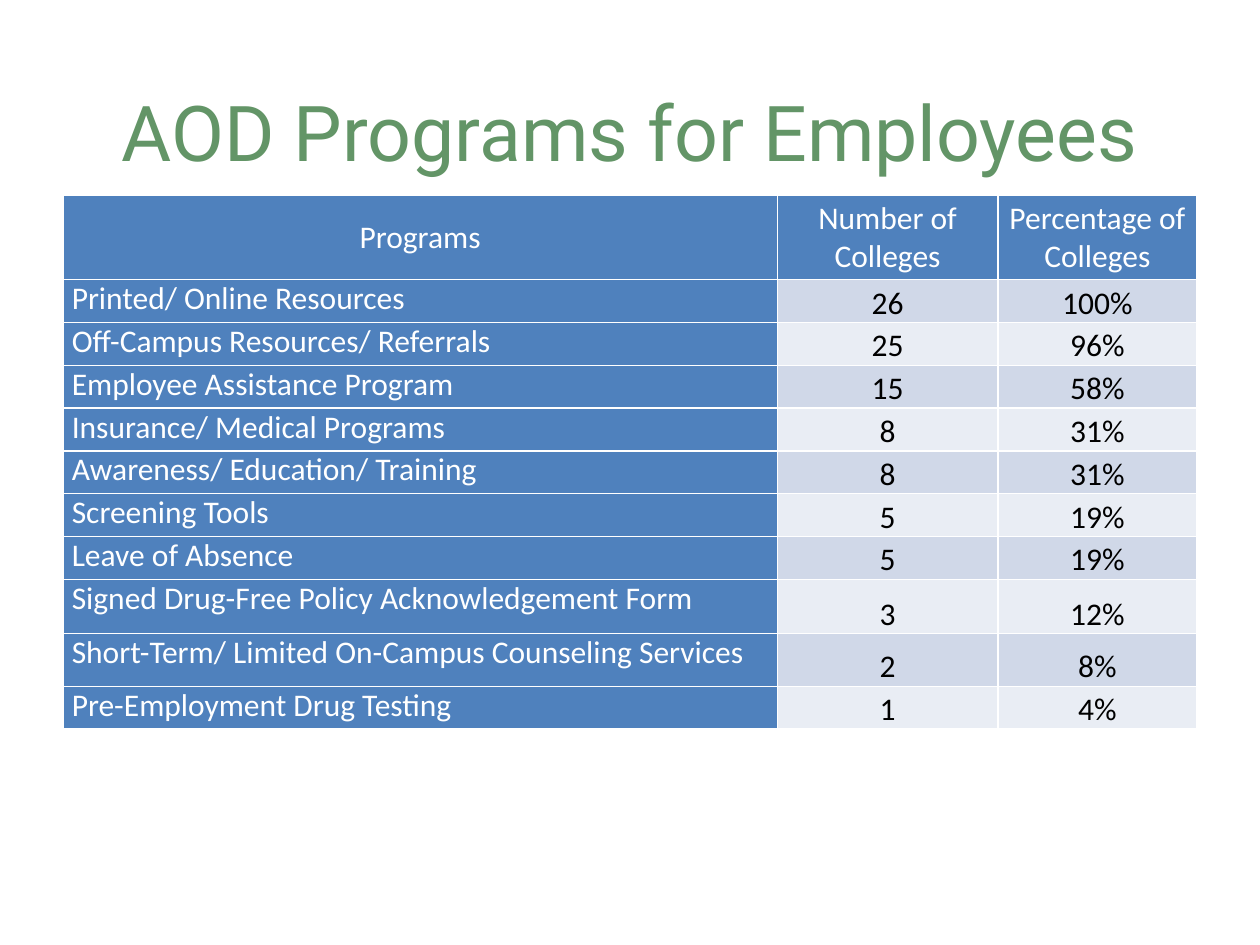
from pptx import Presentation
from pptx.dml.color import RGBColor
from pptx.enum.text import MSO_ANCHOR, PP_ALIGN
from pptx.oxml import parse_xml
from pptx.oxml.ns import nsdecls
from pptx.util import Inches, Pt

CENTER, LEFT = PP_ALIGN.CENTER, PP_ALIGN.LEFT
TOP, MIDDLE, BOTTOM = MSO_ANCHOR.TOP, MSO_ANCHOR.MIDDLE, MSO_ANCHOR.BOTTOM

TITLE = "AOD Programs for Employees"
HEADER = ("Programs", "Number of Colleges", "Percentage of Colleges")
PROGRAMS = [
    ("Printed/ Online Resources", "26", "100%"),
    ("Off-Campus Resources/ Referrals", "25", "96%"),
    ("Employee Assistance Program", "15", "58%"),
    ("Insurance/ Medical Programs", "8", "31%"),
    ("Awareness/ Education/ Training", "8", "31%"),
    ("Screening Tools", "5", "19%"),
    ("Leave of Absence", "5", "19%"),
    ("Signed Drug-Free Policy Acknowledgement Form", "3", "12%"),
    ("Short-Term/ Limited On-Campus Counseling Services", "2", "8%"),
    ("Pre-Employment Drug Testing", "1", "4%"),
]
COLORS = {"title": "639567", "blue": "4F81BD", "white": "FFFFFF",
          "black": "000000", "odd": "D0D8E8", "even": "E9EDF4"}
COL_WIDTHS = (5.67, 1.75, 1.58)
ROW_HEIGHT = 0.34
SPECIAL_HEIGHTS = {0: 0.67, 8: 0.43, 9: 0.42}


def color(name):
    return RGBColor.from_string(COLORS[name])


def add_borders(cell):
    """White 1 pt lines around a cell, placed before its fill."""
    tcPr = cell._tc.get_or_add_tcPr()
    for i, side in enumerate(("lnL", "lnR", "lnT", "lnB")):
        tcPr.insert(i, parse_xml(
            f'<a:{side} {nsdecls("a")} w="{Pt(1)}"><a:solidFill>'
            f'<a:srgbClr val="{COLORS["white"]}"/></a:solidFill></a:{side}>'))


def write_cell(cell, text, fill, ink, align, anchor):
    cell.fill.solid()
    cell.fill.fore_color.rgb = color(fill)
    add_borders(cell)
    cell.margin_left = cell.margin_right = Inches(0.07)
    cell.margin_top = cell.margin_bottom = 0
    cell.vertical_anchor = anchor
    p = cell.text_frame.paragraphs[0]
    p.text = text
    p.alignment = align
    p.space_after = Pt(3)
    p.font.name, p.font.size, p.font.bold = "Calibri", Pt(18), False
    p.font.color.rgb = color(ink)


prs = Presentation()
prs.slide_width, prs.slide_height = Inches(10), Inches(7.5)
s = prs.slides.add_slide(prs.slide_layouts[5])

# Title
title = s.shapes.title
title.left, title.top = Inches(0.5), Inches(0.41)
title.width, title.height = Inches(9), Inches(1.25)
title.text_frame.text = TITLE
title.text_frame.vertical_anchor = MIDDLE
p = title.text_frame.paragraphs[0]
p.alignment = CENTER
p.font.name, p.font.size = "Roboto", Pt(44)
p.font.color.rgb = color("title")

# Table
rows = [HEADER] + PROGRAMS
heights = [SPECIAL_HEIGHTS.get(i, ROW_HEIGHT) for i in range(len(rows))]
table = s.shapes.add_table(len(rows), len(HEADER), Inches(0.5), Inches(1.55),
                           Inches(sum(COL_WIDTHS)), Inches(sum(heights))).table
table.first_col = True
for column, width in zip(table.columns, COL_WIDTHS):
    column.width = Inches(width)
for i, (values, height) in enumerate(zip(rows, heights)):
    table.rows[i].height = Inches(height)
    for j, text in enumerate(values):
        if i == 0:
            look = ("blue", "white", CENTER, MIDDLE)
        elif j == 0:
            look = ("blue", "white", LEFT, TOP)
        else:
            look = ("odd" if i % 2 else "even", "black", CENTER, BOTTOM)
        write_cell(table.cell(i, j), text, *look)

prs.save("out.pptx")
